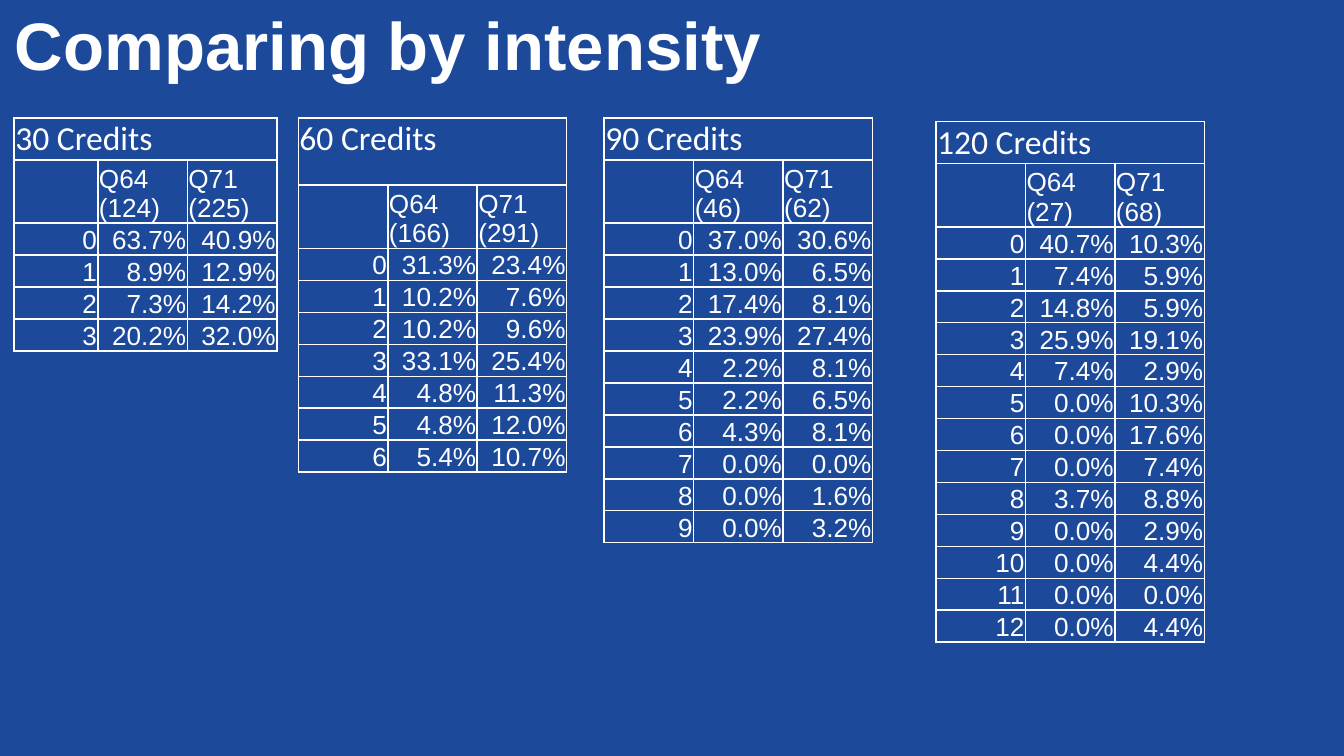
from lxml import etree
from pptx import Presentation
from pptx import util as u
from pptx.dml import color
from pptx.enum import text
from pptx.oxml import ns

TITLE = "Comparing by intensity"
BLUE, WHITE = "1D499B", "FFFFFF"
CREDIT_GROUPS = [
    {"heading": "30 Credits", "left": 0.27, "top": 2.23,
     "label_width": 1.58, "heading_height": 0.79, "anchor": "BOTTOM",
     "columns": {
         "Q64 (124)": [63.7, 8.9, 7.3, 20.2],
         "Q71 (225)": [40.9, 12.9, 14.2, 32.0]}},
    {"heading": "60 Credits", "left": 5.64, "top": 2.23,
     "label_width": 1.69, "heading_height": 1.27, "anchor": "TOP",
     "columns": {
         "Q64 (166)": [31.3, 10.2, 10.2, 33.1, 4.8, 4.8, 5.4],
         "Q71 (291)": [23.4, 7.6, 9.6, 25.4, 11.3, 12.0, 10.7]}},
    {"heading": "90 Credits", "left": 11.42, "top": 2.23,
     "label_width": 1.69, "heading_height": 0.79, "anchor": "BOTTOM",
     "columns": {
         "Q64 (46)": [37.0, 13.0, 17.4, 23.9, 2.2, 2.2, 4.3, 0, 0, 0],
         "Q71 (62)": [30.6, 6.5, 8.1, 27.4, 8.1, 6.5, 8.1, 0, 1.6, 3.2]}},
    {"heading": "120 Credits", "left": 17.69, "top": 2.3,
     "label_width": 1.69, "heading_height": 0.79, "anchor": "BOTTOM",
     "columns": {
         "Q64 (27)": [40.7, 7.4, 14.8, 25.9, 7.4, 0, 0, 0, 3.7, 0, 0, 0, 0],
         "Q71 (68)": [10.3, 5.9, 5.9, 19.1, 2.9, 10.3, 17.6, 7.4, 8.8, 2.9,
                      4.4, 0, 4.4]}},
]
VALUE_WIDTH, HEADER_HEIGHT, DATA_HEIGHT = 1.69, 1.13, 0.57
HEADING_FONT = {"name": "Calibri", "size": u.Pt(18)}
CELL_FONT = {"name": "Arial", "size": u.Pt(14)}
TITLE_FONT = {"name": "Arial", "size": u.Pt(36), "bold": True}
CELL_FORMAT = {"margin_left": u.Cm(0.02), "margin_right": u.Cm(0.02),
               "margin_top": u.Cm(0.01), "margin_bottom": 0,
               "vertical_anchor": text.MSO_ANCHOR.BOTTOM}
TITLE_PLACE = {"left": u.Cm(0.28), "top": u.Cm(0.23),
               "width": u.Cm(23.75), "height": u.Cm(1.4)}
TITLE_FRAME = {"margin_left": 0, "margin_right": 0, "margin_top": 0,
               "margin_bottom": 0, "word_wrap": True,
               "vertical_anchor": text.MSO_ANCHOR.MIDDLE,
               "auto_size": text.MSO_AUTO_SIZE.SHAPE_TO_FIT_TEXT}


def apply(target, settings):
    for name, value in settings.items():
        setattr(target, name, value)


def paint(fill, hex_color):
    fill.solid()
    fill.fore_color.rgb = color.RGBColor.from_string(hex_color)


def write(paragraph, words, font, align):
    paragraph.alignment = align
    run = paragraph.add_run()
    run.text = words
    apply(run.font, font)
    paint(run.font.fill, WHITE)


def add_borders(cell):
    properties = cell._tc.get_or_add_tcPr()
    for side in "LRTB":
        line = etree.SubElement(properties, ns.qn(f"a:ln{side}"), w=str(u.Pt(1)))
        fill = etree.SubElement(line, ns.qn("a:solidFill"))
        etree.SubElement(fill, ns.qn("a:srgbClr"), val=WHITE)


def add_credit_table(slide, group):
    columns = group["columns"]
    records = [["", *columns]]
    for number, values in enumerate(zip(*columns.values())):
        records.append([str(number), *(f"{value:.1f}%" for value in values)])
    widths = [group["label_width"], VALUE_WIDTH, VALUE_WIDTH]
    heights = [group["heading_height"], HEADER_HEIGHT]
    heights += [DATA_HEIGHT] * (len(records) - 1)
    table = slide.shapes.add_table(
        len(heights), len(widths), u.Cm(group["left"]), u.Cm(group["top"]),
        u.Cm(sum(widths)), u.Cm(sum(heights))).table
    for column, width in zip(table.columns, widths):
        column.width = u.Cm(width)
    for row, height in zip(table.rows, heights):
        row.height = u.Cm(height)
    for cell in table.iter_cells():
        apply(cell, CELL_FORMAT)
        add_borders(cell)
        cell.fill.background()
    heading = table.cell(0, 0)
    heading.merge(table.cell(0, len(widths) - 1))
    heading.vertical_anchor = text.MSO_ANCHOR[group["anchor"]]
    write(heading.text_frame.paragraphs[0], group["heading"],
          HEADING_FONT, text.PP_ALIGN.LEFT)
    for row_index, record in enumerate(records, 1):
        align = text.PP_ALIGN.LEFT if row_index == 1 else text.PP_ALIGN.RIGHT
        for column_index, words in enumerate(record):
            if words:
                cell = table.cell(row_index, column_index)
                write(cell.text_frame.paragraphs[0], words, CELL_FONT, align)


def main():
    deck = Presentation()
    apply(deck, {"slide_width": u.Cm(25.4), "slide_height": u.Cm(14.29)})
    slide = deck.slides.add_slide(deck.slide_layouts[0])
    paint(slide.background.fill, BLUE)
    subtitle = slide.placeholders[1].element
    subtitle.getparent().remove(subtitle)
    title = slide.shapes.title
    apply(title, TITLE_PLACE)
    apply(title.text_frame, TITLE_FRAME)
    title_line = title.text_frame.paragraphs[0]
    title_line.line_spacing = 0.9
    write(title_line, TITLE, TITLE_FONT, text.PP_ALIGN.LEFT)
    for group in CREDIT_GROUPS:
        add_credit_table(slide, group)
    deck.save("out.pptx")


if __name__ == "__main__":
    main()
